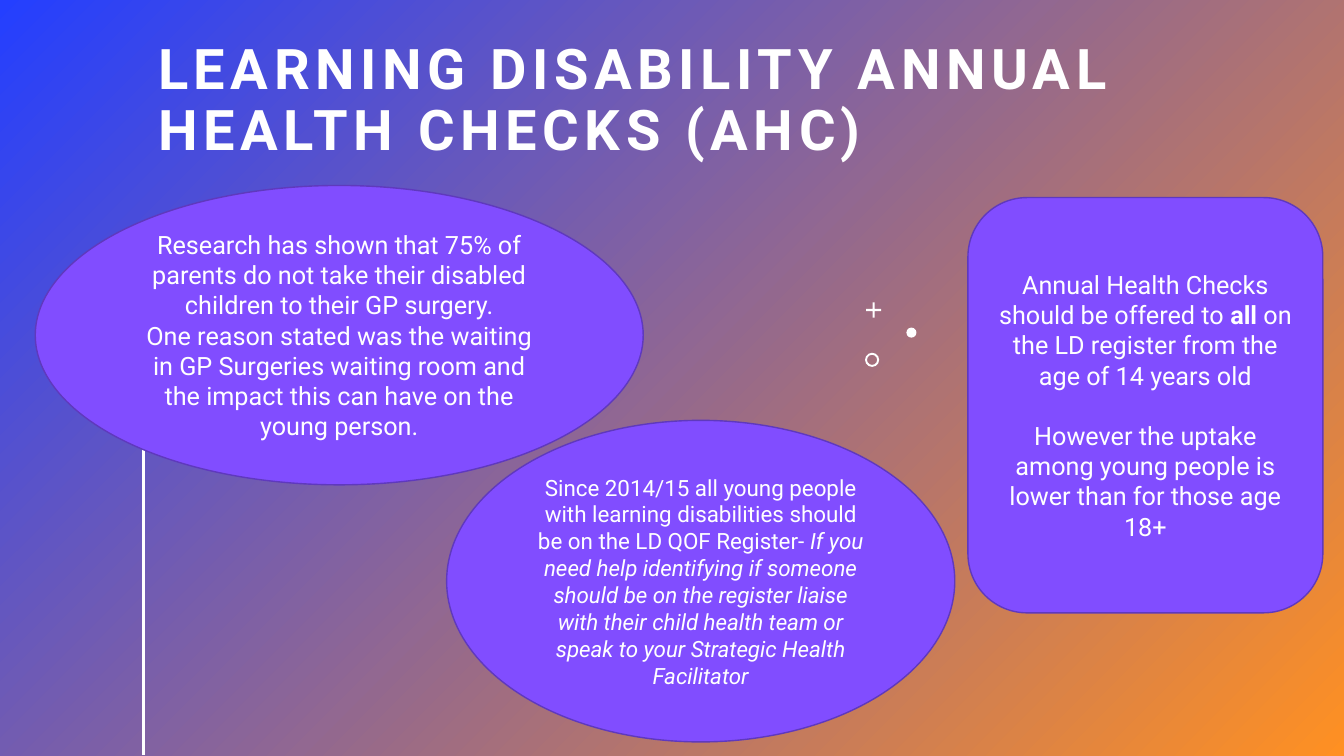
from pptx import Presentation
from pptx.dml.color import RGBColor
from pptx.enum.shapes import MSO_CONNECTOR, MSO_SHAPE
from pptx.enum.text import MSO_ANCHOR, PP_ALIGN
from pptx.oxml.ns import qn
from pptx.util import Inches, Pt
from lxml import etree

ELLIPSE, ROUNDED = MSO_SHAPE.OVAL, MSO_SHAPE.ROUNDED_RECTANGLE
CROSS, DONUT = MSO_SHAPE.CROSS, MSO_SHAPE.DONUT
CENTER, LEFT = PP_ALIGN.CENTER, PP_ALIGN.LEFT
MIDDLE, BOTTOM = MSO_ANCHOR.MIDDLE, MSO_ANCHOR.BOTTOM

# Content: each paragraph is a list of (text, style) spans
FONT = "Roboto"
WHITE, PURPLE, OUTLINE = "FFFFFF", "814DFF", "5F39BD"
BACKGROUND = ("243FFF", "FF9022")
TITLE = [[("LEARNING DISABILITY ANNUAL HEALTH CHECKS (AHC)", "bold")]]
RESEARCH = [
    [("Research has shown that 75% of parents do not take their disabled "
      "children to their GP surgery.", "")],
    [("One reason stated was the waiting in GP Surgeries waiting room and "
      "the impact this can have on the young person.", "")],
]
REGISTER = [[
    ("Since 2014/15 all young people with learning disabilities should be "
     "on the LD QOF Register- ", ""),
    ("If you need help identifying if someone should be on the register "
     "liaise with their child health team or speak to your Strategic Health "
     "Facilitator", "italic"),
]]
UPTAKE = [
    [("Annual Health Checks should be offered to ", ""), ("all", "bold"),
     (" on the LD register from the age of 14 years old", "")],
    [("However the uptake among young people is lower than for those age "
      "18+", "")],
]
# preset, (left, top, width, height), paragraphs, text size, paragraph gap
BUBBLES = [
    (ELLIPSE, (0.35, 1.84, 6.03, 2.97), RESEARCH, 18, 0),
    (ELLIPSE, (4.43, 4.17, 5.04, 3.19), REGISTER, 16, 0),
    (ROUNDED, (9.6, 1.96, 3.52, 4.12), UPTAKE, 18, 21.5),
]
# preset, left, top, diameter, adjustment
ORNAMENTS = [
    (ELLIPSE, 8.99, 3.25, 0.1, None),
    (CROSS, 8.59, 3.0, 0.15, 0.43),
    (DONUT, 8.58, 3.5, 0.14, 0.14),
]


def color(value):
    return RGBColor.from_string(value)


def add_preset(page, preset, box, fill, line=None):
    shape = page.shapes.add_shape(preset, *map(Inches, box))
    shape.shadow.inherit = False
    shape.fill.solid()
    shape.fill.fore_color.rgb = color(fill)
    if line:
        shape.line.color.rgb = color(line)
        shape.line.width = Pt(1)
    else:
        shape.line.fill.background()
    return shape


def write(shape, paragraphs, size, align=CENTER, anchor=MIDDLE, gap=0,
          line_spacing=None, tracking=0):
    frame = shape.text_frame
    frame.word_wrap = True
    frame.vertical_anchor = anchor
    for index, spans in enumerate(paragraphs):
        para = frame.add_paragraph() if index else frame.paragraphs[0]
        para.alignment = align
        if index and gap:
            para.space_before = Pt(gap)
        if line_spacing:
            para.line_spacing = line_spacing
        for text, style in spans:
            span = para.add_run()
            span.text = text
            span.font.name = FONT
            span.font.size = Pt(size)
            span.font.color.rgb = color(WHITE)
            span.font.bold = style == "bold"
            span.font.italic = style == "italic"
            if tracking:
                span.font._element.set("spc", str(tracking * 100))


deck = Presentation()
deck.slide_width, deck.slide_height = Inches(13.33), Inches(7.5)
page = deck.slides.add_slide(deck.slide_layouts[6])

# Diagonal background, top left to bottom right
backdrop = page.background.fill
backdrop.gradient()
backdrop.gradient_angle = 315
for stop, value in zip(backdrop.gradient_stops, BACKGROUND):
    stop.color.rgb = color(value)

# Vertical rule
rule = page.shapes.add_connector(
    MSO_CONNECTOR.STRAIGHT, *map(Inches, (1.42, 3.82, 1.42, 7.49)))
rule.line.color.rgb = color(WHITE)
rule.line.width = Pt(2)
etree.SubElement(rule._element.spPr, qn("a:effectLst"))

# Small ornaments
for preset, left, top, diameter, adjustment in ORNAMENTS:
    ornament = add_preset(page, preset, (left, top, diameter, diameter), WHITE)
    if adjustment:
        ornament.adjustments[0] = adjustment

# Title
title = page.shapes.add_textbox(*map(Inches, (1.47, 0.35, 10.6, 1.31)))
write(title, TITLE, 40, align=LEFT, anchor=BOTTOM, line_spacing=0.9, tracking=4)

# Bubbles
for preset, box, paragraphs, size, gap in BUBBLES:
    bubble = add_preset(page, preset, box, PURPLE, OUTLINE)
    write(bubble, paragraphs, size, gap=gap)

deck.save("out.pptx")
